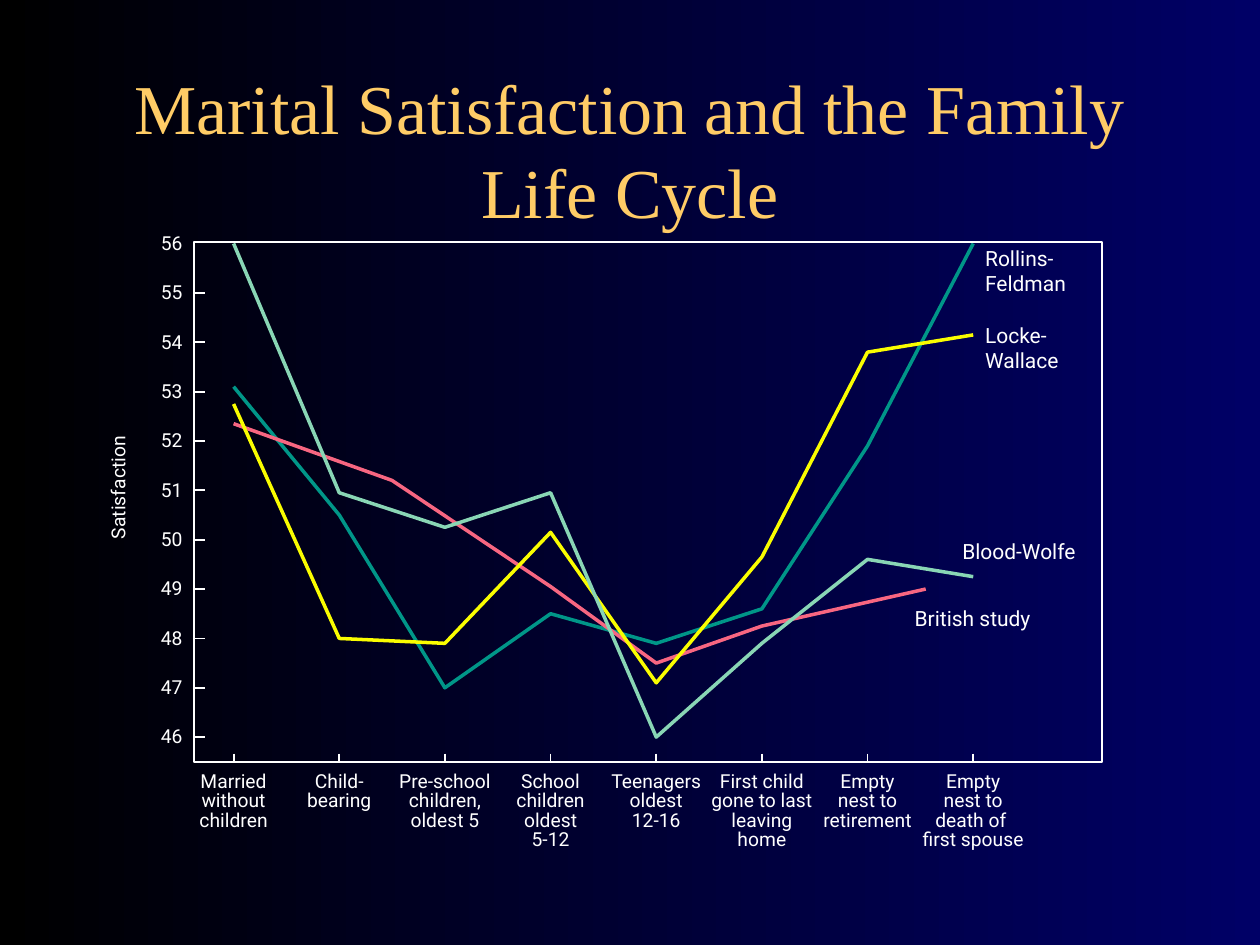
"""Build a slide that plots marital satisfaction over the family life cycle."""
import pptx
import pptx.dml.color
import pptx.enum.shapes
import pptx.enum.text
import pptx.oxml
import pptx.util

Cm = pptx.util.Cm
Pt = pptx.util.Pt
Align = pptx.enum.text.PP_ALIGN

WHITE = "FFFFFF"
TOP_VALUE, BOTTOM_VALUE = 56, 46
FRAME = (3.91, 4.88, 18.31, 10.49)

STAGES = [
    ("Married\vwithout\vchildren", 1.78, 3),
    ("Child-\vbearing", 1.57, 2),
    ("Pre-school children, oldest 5", 2.29, 3),
    ("School\vchildren\voldest\v5-12", 1.57, 4),
    ("Teenagers oldest\v12-16", 2.08, 3),
    ("First child gone to last leaving\vhome", 2.39, 4),
    ("Empty\vnest to retirement", 2.06, 3),
    ("Empty\vnest to\vdeath of \vfirst spouse", 2.29, 4),
]
ALL_STAGES = range(len(STAGES))
STUDIES = [
    ("009688", ALL_STAGES, [53.1, 50.5, 47, 48.5, 47.9, 48.6, 51.9, 56]),
    ("F76681", [0, 1.5, 3, 4, 5, 6.55], [52.35, 51.2, 49.05, 47.5, 48.25, 49]),
    ("FAFD00", ALL_STAGES, [52.75, 48, 47.9, 50.15, 47.1, 49.65, 53.8, 54.15]),
    ("89D6B5", ALL_STAGES, [56, 50.95, 50.25, 50.95, 46, 47.9, 49.6, 49.25]),
]
STUDY_LABELS = [
    ("British study", 18.19, 12.09, 0.76),
    ("Blood-Wolfe", 19.15, 10.74, 0.76),
    ("Locke-Wallace", 19.61, 6.38, 1.27),
    ("Rollins-\vFeldman", 19.61, 4.83, 1.27),
]


def color(hex_string):
    return pptx.dml.color.RGBColor.from_string(hex_string)


def stage_x(stage):
    return 4.71 + 2.13 * stage


def value_y(value):
    return 4.91 + 0.995 * (TOP_VALUE - value)


class SlideBuilder:
    def __init__(self, presentation):
        self.slide = presentation.slides.add_slide(presentation.slide_layouts[6])
        self.shapes = self.slide.shapes
        self.font = "Roboto"

    def background(self, start, end):
        fill = self.slide.background.fill
        fill.gradient()
        fill.gradient_angle = 0
        for stop, hex_string in zip(fill.gradient_stops, (start, end)):
            stop.color.rgb = color(hex_string)

    def text(self, text, box, size=12, font=None, hex_string=WHITE, align=None):
        shape = self.shapes.add_textbox(*map(Cm, box))
        frame = shape.text_frame
        frame.word_wrap = True
        frame.text = text
        paragraph = frame.paragraphs[0]
        paragraph.alignment = align
        for run in paragraph.runs:
            run.font.name = font or self.font
            run.font.size = Pt(size)
            run.font.color.rgb = color(hex_string)
        return shape

    def axis_text(self, text, box, align=Align.CENTER):
        shape = self.text(text, box, size=11, align=align)
        frame = shape.text_frame
        frame.margin_left = frame.margin_right = 0
        frame.margin_top = frame.margin_bottom = 0
        frame.paragraphs[0].line_spacing = 0.85
        return shape

    def outline(self, shape, hex_string, width):
        shape.line.color.rgb = color(hex_string)
        shape.line.width = Pt(width)

    def tick(self, *ends):
        straight = pptx.enum.shapes.MSO_CONNECTOR.STRAIGHT
        connector = self.shapes.add_connector(straight, *map(Cm, ends))
        self.outline(connector, WHITE, 1)
        effects = pptx.oxml.parse_xml(
            '<a:effectLst xmlns:a="http://schemas.openxmlformats.org/drawingml/2006/main"/>')
        connector._element.spPr.append(effects)

    def curve(self, hex_string, points):
        points = [(Cm(x), Cm(y)) for x, y in points]
        builder = self.shapes.build_freeform(*points[0])
        builder.add_line_segments(points[1:], close=False)
        shape = builder.convert_to_shape()
        shape.shadow.inherit = False
        shape.fill.background()
        self.outline(shape, hex_string, 2)

    def frame(self, box):
        rectangle = pptx.enum.shapes.MSO_SHAPE.RECTANGLE
        shape = self.shapes.add_shape(rectangle, *map(Cm, box))
        shape.shadow.inherit = False
        shape.fill.background()
        self.outline(shape, WHITE, 1)


def main():
    presentation = pptx.Presentation()
    presentation.slide_width, presentation.slide_height = Cm(25.4), Cm(19.05)
    builder = SlideBuilder(presentation)
    builder.background("000000", "000066")

    title = builder.text("Marital Satisfaction and the Family Life Cycle",
                         (1.9, 1.4, 21.59, 3.18), 40, "Times New Roman",
                         "FFCC66", Align.CENTER)
    title.text_frame.vertical_anchor = pptx.enum.text.MSO_ANCHOR.MIDDLE

    left, top, _, height = FRAME
    bottom = top + height
    for value in range(TOP_VALUE, BOTTOM_VALUE - 1, -1):
        y = value_y(value)
        builder.axis_text(str(value), (2.97, y - 0.18, 0.71, 0.4), Align.RIGHT)
        if value < TOP_VALUE:
            builder.tick(left, y, left + 0.23, y)

    for stage, (name, width, lines) in enumerate(STAGES):
        x = stage_x(stage)
        builder.axis_text(name, (x - width / 2, 15.57, width, 0.4 * lines))
        builder.tick(x, bottom - 0.18, x, bottom)

    for hex_string, stages, values in STUDIES:
        builder.curve(hex_string, zip(map(stage_x, stages), map(value_y, values)))
    for name, x, y, label_height in STUDY_LABELS:
        builder.text(name, (x, y, 2.84, label_height))

    builder.axis_text("Satisfaction", (1.19, 9.63, 2.44, 0.4)).rotation = 270
    builder.frame(FRAME)
    presentation.save("out.pptx")


if __name__ == "__main__":
    main()
